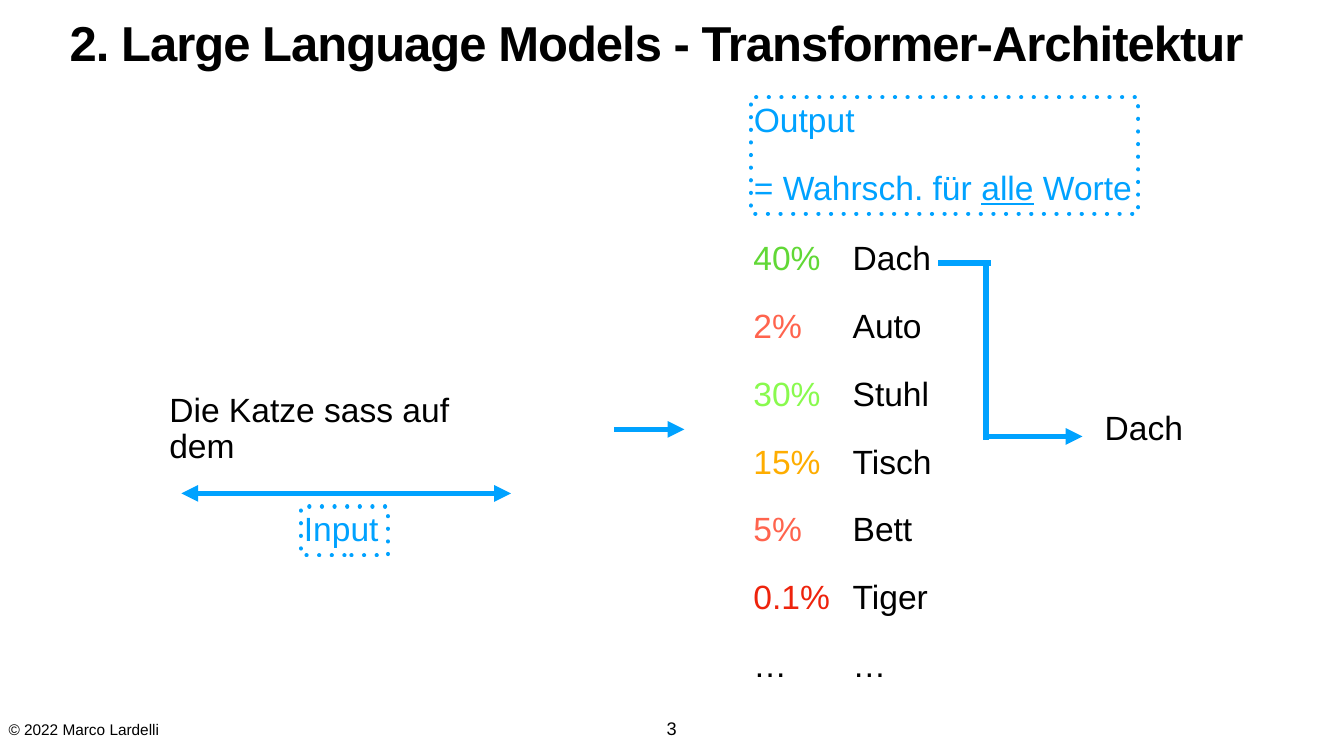
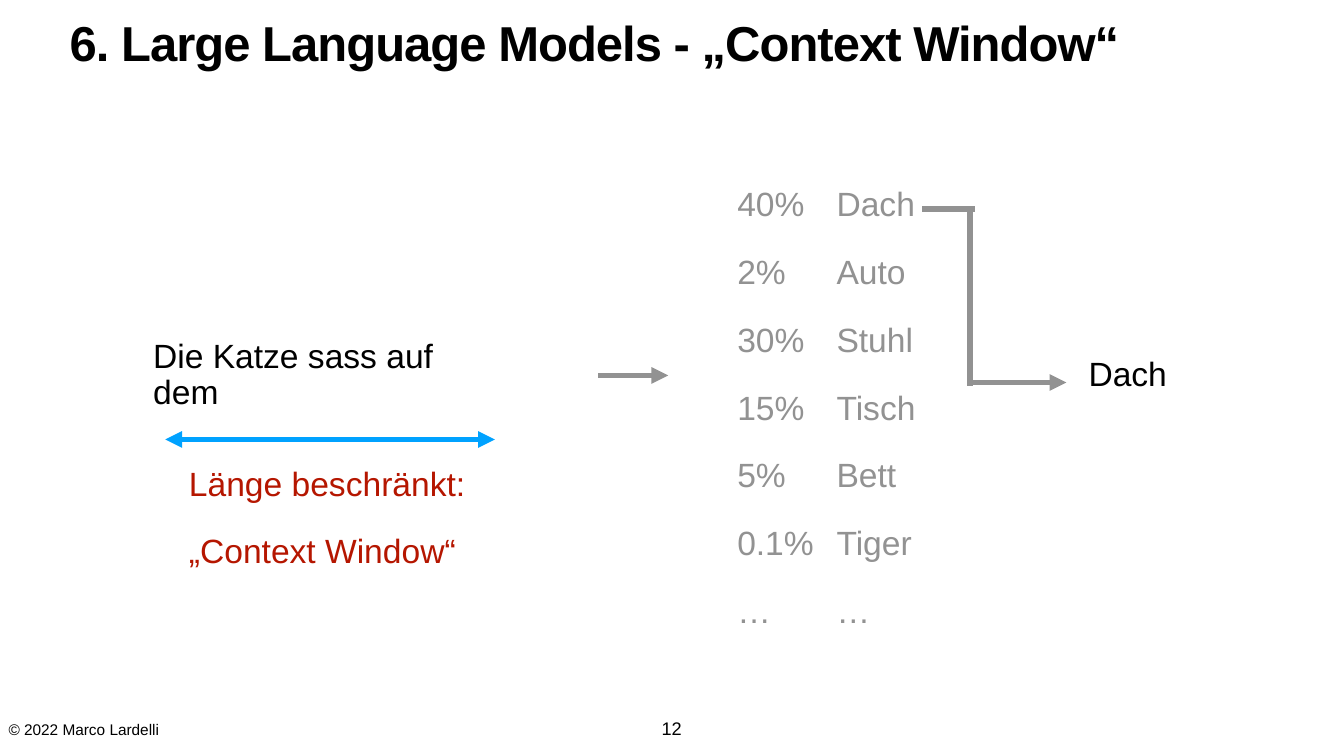
from dataclasses import dataclass

from lxml.etree import SubElement
from pptx import Presentation
from pptx.dml.color import RGBColor
from pptx.enum.shapes import MSO_CONNECTOR, MSO_SHAPE
from pptx.enum.text import MSO_ANCHOR, MSO_AUTO_SIZE, PP_ALIGN
from pptx.oxml.ns import qn
from pptx.util import Inches, Pt


@dataclass(frozen=True)
class Theme:
    font: str = "Arial"
    black: str = "000000"
    blue: str = "00A2FF"
    gray: str = "929292"
    dark_red: str = "B51600"
    red: str = "EE230C"
    coral: str = "FF644E"
    orange: str = "FEAD00"
    light_green: str = "89FA4E"
    green: str = "61D836"
    title_size: int = 70
    body_size: int = 48
    number_size: int = 26
    footer_size: int = 22
    paragraph_gap: int = 45
    line_spacing: float = 0.9
    arrow_width: int = 8
    frame_width: int = 6


THEME = Theme()
COPYRIGHT = "© 2022 Marco Lardelli"
PROBABILITIES = ["40%", "2%", "30%", "15%", "5%", "0.1%", "…"]
WORDS = ["Dach", "Auto", "Stuhl", "Tisch", "Bett", "Tiger", "…"]
RATING_COLORS = [THEME.green, THEME.coral, THEME.light_green, THEME.orange,
                 THEME.coral, THEME.red, THEME.black]


class Deck:
    def __init__(self, theme):
        self.theme = theme
        self.presentation = Presentation()
        self.presentation.slide_width = Inches(26.67)
        self.presentation.slide_height = Inches(15)
        self.slide = None
        self.shift = (0, 0)

    def add_slide(self, title, number, shift=(0, 0)):
        layout = self.presentation.slide_layouts.get_by_name("Title Only")
        self.slide = self.presentation.slides.add_slide(layout)
        self.shift = (0, 0)
        self.text([COPYRIGHT], 0.11, 14.25, 3.15, 0.48, size=self.theme.footer_size)
        self.title(title)
        self.text([number], 13.03, 14.17, 0.6, 0.55, size=self.theme.number_size,
                  alignment=PP_ALIGN.CENTER, anchor=MSO_ANCHOR.BOTTOM, line_spacing=1.0)
        self.shift = shift

    def place(self, x, y):
        return Inches(x + self.shift[0]), Inches(y + self.shift[1])

    def format_frame(self, frame, anchor):
        frame.margin_left = frame.margin_right = Inches(0.06)
        frame.margin_top = frame.margin_bottom = Inches(0.06)
        frame.auto_size = MSO_AUTO_SIZE.NONE
        frame.word_wrap = True
        frame.vertical_anchor = anchor

    def format_paragraph(self, paragraph, size, color, alignment, line_spacing):
        paragraph.alignment = alignment
        paragraph.line_spacing = line_spacing
        paragraph.font.name = self.theme.font
        paragraph.font.size = Pt(size)
        paragraph.font.color.rgb = RGBColor.from_string(color)

    def title(self, wording):
        shape = self.slide.shapes.title
        shape.left, shape.top = Inches(1.32), Inches(0.42)
        shape.width, shape.height = Inches(24.03), Inches(1.57)
        self.format_frame(shape.text_frame, MSO_ANCHOR.TOP)
        paragraph = shape.text_frame.paragraphs[0]
        run = paragraph.add_run()
        run.text = wording
        run._r.get_or_add_rPr().set("spc", "-140")
        self.format_paragraph(paragraph, self.theme.title_size, self.theme.black,
                              PP_ALIGN.LEFT, 0.8)
        paragraph.font.bold = True

    def fill_text(self, frame, lines, colors, size, alignment, anchor, line_spacing,
                  underlined=None):
        self.format_frame(frame, anchor)
        for index, (line, color) in enumerate(zip(lines, colors)):
            paragraph = frame.add_paragraph() if index else frame.paragraphs[0]
            self.format_paragraph(paragraph, size, color, alignment, line_spacing)
            paragraph.space_before = Pt(self.theme.paragraph_gap if index else 0)
            parts = line.partition(underlined) if underlined else (line,)
            for part in filter(None, parts):
                run = paragraph.add_run()
                run.text = part
                if part == underlined:
                    run.font.underline = True

    def text(self, lines, x, y, width, height, colors=None, size=None,
             alignment=PP_ALIGN.LEFT, anchor=MSO_ANCHOR.MIDDLE, line_spacing=None):
        shape = self.slide.shapes.add_textbox(*self.place(x, y), Inches(width), Inches(height))
        self.fill_text(shape.text_frame, lines, colors or [self.theme.black] * len(lines),
                       size or self.theme.body_size, alignment, anchor,
                       line_spacing or self.theme.line_spacing)

    def dotted_box(self, lines, x, y, width, height, underlined=None):
        shape = self.slide.shapes.add_shape(
            MSO_SHAPE.RECTANGLE, *self.place(x, y), Inches(width), Inches(height))
        shape.shadow.inherit = False
        shape.fill.background()
        shape.line.color.rgb = RGBColor.from_string(self.theme.blue)
        shape.line.width = Pt(self.theme.frame_width)
        outline = shape.line._get_or_add_ln()
        outline.set("cap", "rnd")
        dashes = SubElement(outline, qn("a:custDash"))
        SubElement(dashes, qn("a:ds"), d="100000", sp="200000")
        self.fill_text(shape.text_frame, lines, [self.theme.blue] * len(lines),
                       self.theme.body_size, PP_ALIGN.LEFT, MSO_ANCHOR.MIDDLE,
                       self.theme.line_spacing, underlined)

    def line(self, start, end, color, arrowheads=()):
        connector = self.slide.shapes.add_connector(
            MSO_CONNECTOR.STRAIGHT, *self.place(*start), *self.place(*end))
        connector.line.color.rgb = RGBColor.from_string(color)
        connector.line.width = Pt(self.theme.arrow_width)
        for arrowhead in arrowheads:
            SubElement(connector.line._get_or_add_ln(), qn(f"a:{arrowhead}"), type="triangle")
        SubElement(connector._element.spPr, qn("a:effectLst"))

    def prediction(self, arrow_color, probability_colors, word_color):
        self.text(["Die Katze sass auf dem"], 3.3, 8.08, 7.14, 0.88)
        self.text(PROBABILITIES, 14.89, 4.73, 1.72, 8.92, probability_colors)
        self.text(WORDS, 16.86, 4.73, 1.72, 8.92, [word_color] * len(WORDS))
        self.text(["Dach"], 21.86, 8.08, 1.68, 0.88)
        self.line((3.6, 9.79), (10.14, 9.79), self.theme.blue, ("headEnd", "tailEnd"))
        self.line((12.19, 8.52), (13.58, 8.52), arrow_color, ("tailEnd",))
        self.line((18.62, 5.22), (19.67, 5.22), arrow_color)
        self.line((19.52, 8.66), (21.48, 8.66), arrow_color, ("tailEnd",))
        self.line((19.57, 5.18), (19.57, 8.73), arrow_color)


def main():
    deck = Deck(THEME)

    deck.add_slide("2. Large Language Models - Transformer-Architektur", "3")
    deck.prediction(THEME.blue, RATING_COLORS, THEME.black)
    deck.dotted_box(["Input"], 5.97, 10.05, 1.73, 0.97)
    deck.dotted_box(["Output", "= Wahrsch. für alle Worte"], 14.9, 1.93, 7.69, 2.31, "alle")

    deck.add_slide("6. Large Language Models - „Context Window“", "12", shift=(-0.32, -1.07))
    deck.prediction(THEME.gray, [THEME.gray] * len(PROBABILITIES), THEME.gray)
    deck.text(["Länge beschränkt:", "„Context Window“"], 4.01, 10.26, 5.66, 2.22,
              [THEME.dark_red] * 2)

    deck.presentation.save("out.pptx")


if __name__ == "__main__":
    main()
